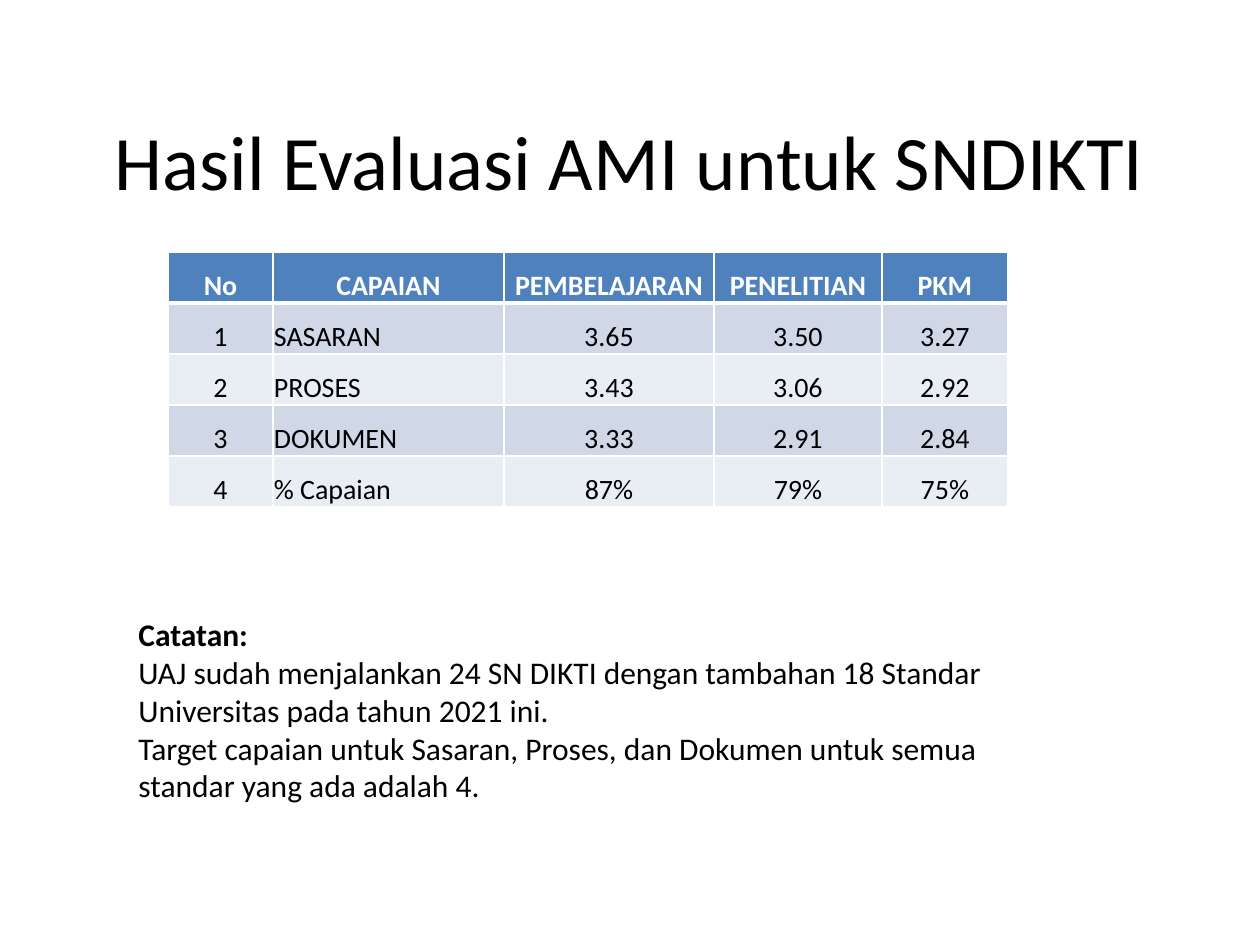
from lxml.etree import SubElement
from pptx import Presentation
from pptx.dml.color import RGBColor
from pptx.enum.text import MSO_ANCHOR as ANCHOR, PP_ALIGN as ALIGN
from pptx.oxml.ns import qn
from pptx.util import Pt

PX = 914400 // 126
BLACK, WHITE, HEADER = "000000", "FFFFFF", "4F81BD"
BANDS = ["D0D8E8", "E9EDF4"]

TITLE = "Hasil Evaluasi AMI untuk SNDIKTI"
ROWS = [
    ["No", "CAPAIAN", "PEMBELAJARAN", "PENELITIAN", "PKM"],
    ["1", "SASARAN", "3.65", "3.50", "3.27"],
    ["2", "PROSES", "3.43", "3.06", "2.92"],
    ["3", "DOKUMEN", "3.33", "2.91", "2.84"],
    ["4", "% Capaian", "87%", "79%", "75%"],
]
COL_WIDTHS = [105, 231, 210, 168, 126]
ROW_HEIGHT = 51
NOTES = [
    ("Catatan:", True),
    ("UAJ sudah menjalankan 24 SN DIKTI dengan tambahan 18 Standar "
     "Universitas pada tahun 2021 ini.", False),
    ("Target capaian untuk Sasaran, Proses, dan Dokumen untuk semua "
     "standar yang ada adalah 4.", False),
]


def px(*lengths):
    return [n * PX for n in lengths]


def rgb(value):
    return RGBColor.from_string(value)


def set_attrs(obj, **values):
    for name, value in values.items():
        setattr(obj, name, value)


def write(p, text, size, color=BLACK, bold=False, align=ALIGN.LEFT):
    p.alignment = align
    r = p.add_run()
    r.text = text
    set_attrs(r.font, name="Calibri", size=Pt(size), bold=bold)
    r.font.color.rgb = rgb(color)


def add_text(slide, box, lines, size, align=ALIGN.LEFT, anchor=ANCHOR.TOP):
    """Add a text box with one paragraph per (text, bold) pair."""
    tf = slide.shapes.add_textbox(*px(*box)).text_frame
    set_attrs(tf, word_wrap=True, vertical_anchor=anchor)
    for i, (text, bold) in enumerate(lines):
        p = tf.add_paragraph() if i else tf.paragraphs[0]
        write(p, text, size, bold=bold, align=align)


def set_borders(cell, **widths):
    """Draw white cell borders; call before filling, as lines precede the fill."""
    tc_pr = cell._tc.get_or_add_tcPr()
    for side, width in widths.items():
        ln = SubElement(tc_pr, qn(f"a:ln{side}"), w=str(Pt(width)))
        fill = SubElement(ln, qn("a:solidFill"))
        SubElement(fill, qn("a:srgbClr"), val=WHITE)


def add_results(slide, left, top):
    size = px(sum(COL_WIDTHS), ROW_HEIGHT * len(ROWS))
    table = slide.shapes.add_table(
        len(ROWS), len(COL_WIDTHS), *px(left, top), *size).table
    for col, width in zip(table.columns, COL_WIDTHS):
        col.width = width * PX
    for i, row in enumerate(ROWS):
        table.rows[i].height = ROW_HEIGHT * PX
        head = i == 0
        for j, text in enumerate(row):
            cell = table.cell(i, j)
            set_attrs(cell, vertical_anchor=ANCHOR.BOTTOM, margin_left=PX,
                      margin_right=PX, margin_top=PX, margin_bottom=0)
            set_borders(cell, L=1, R=1, T=3 if i == 1 else 1, B=3 if head else 1)
            cell.fill.solid()
            cell.fill.fore_color.rgb = rgb(HEADER if head else BANDS[(i - 1) % 2])
            align = ALIGN.LEFT if j == 1 and not head else ALIGN.CENTER
            write(cell.text_frame.paragraphs[0], text, 16,
                  WHITE if head else BLACK, head, align)


def main():
    prs = Presentation()
    prs.slide_width, prs.slide_height = px(1260, 945)
    slide = prs.slides.add_slide(prs.slide_layouts[6])
    add_text(slide, (94, 84, 1072, 151), [(TITLE, False)], 44,
             ALIGN.CENTER, ANCHOR.MIDDLE)
    add_results(slide, 168, 252)
    add_text(slide, (126, 609, 903, 204), NOTES, 18)
    prs.save("out.pptx")


if __name__ == "__main__":
    main()
